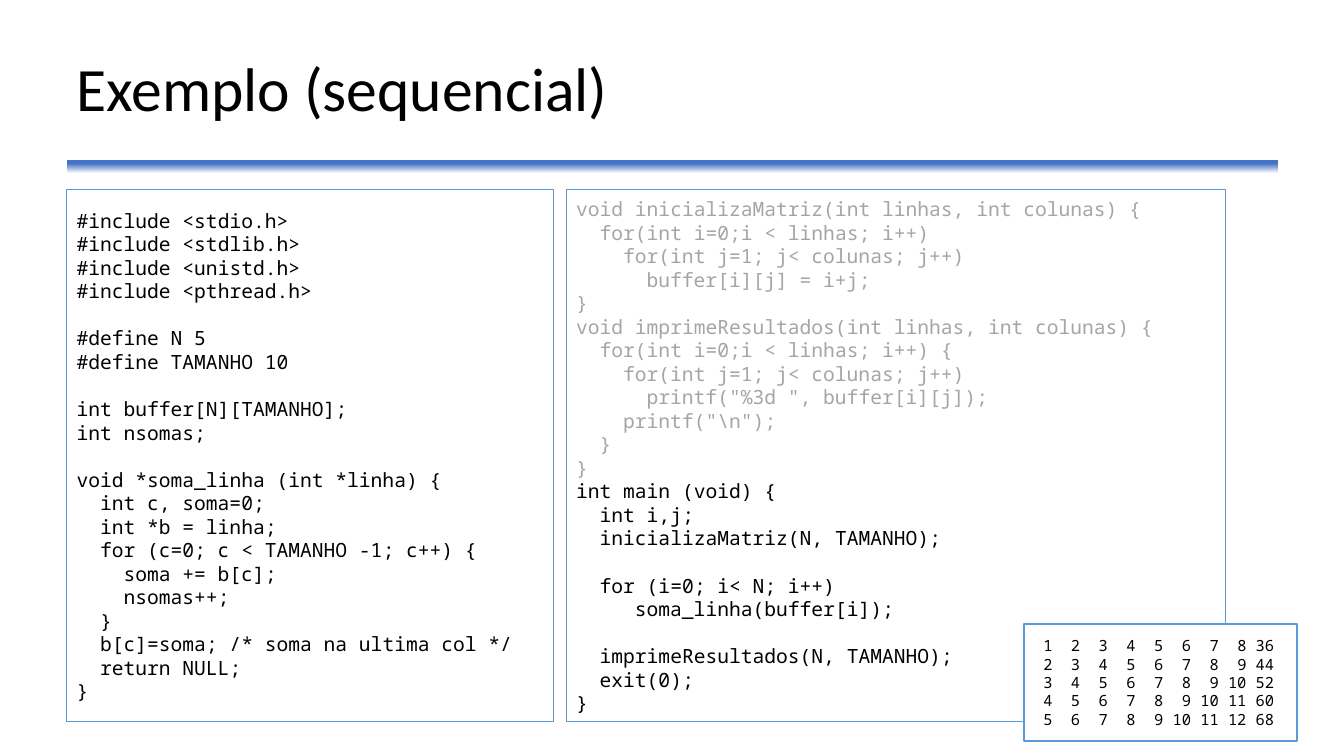
from lxml.etree import SubElement
from pptx import Presentation
from pptx.dml.color import RGBColor
from pptx.enum.shapes import MSO_SHAPE
from pptx.enum.text import MSO_ANCHOR, PP_ALIGN
from pptx.oxml.ns import qn
from pptx.util import Cm, Pt

MONO = "Noto Sans Mono"
BLACK, GREY, BLUE, WHITE = "000000", "A5A5A5", "5B9BD5", "FFFFFF"
CODE_SIZE, GRID_SIZE = 14, 11
ADVANCE = 0.6  # character width of the mono font, in ems
LEFT, WIDTH = Cm(1.68), Cm(30.53)

SUM_CODE = """\
#include <stdio.h>
#include <stdlib.h>
#include <unistd.h>
#include <pthread.h>

#define N 5
#define TAMANHO 10

int buffer[N][TAMANHO];
int nsomas;

void *soma_linha (int *linha) {
  int c, soma=0;
  int *b = linha;
  for (c=0; c < TAMANHO -1; c++) {
    soma += b[c];
    nsomas++;
  }
  b[c]=soma; /* soma na ultima col */
  return NULL;
}"""

HELPER_CODE = r"""void inicializaMatriz(int linhas, int colunas) {
  for(int i=0;i < linhas; i++)
    for(int j=1; j< colunas; j++)
      buffer[i][j] = i+j;
}
void imprimeResultados(int linhas, int colunas) {
  for(int i=0;i < linhas; i++) {
    for(int j=1; j< colunas; j++)
      printf("%3d ", buffer[i][j]);
    printf("\n");
  }
}"""

MAIN_CODE = """\
int main (void) {
  int i,j;
  inicializaMatriz(N, TAMANHO);

  for (i=0; i< N; i++)
     soma_linha(buffer[i]);

  imprimeResultados(N, TAMANHO);
  exit(0);
}"""


def color(code):
    return RGBColor.from_string(code)


def style(para, font, size, code):
    para.font.name = font
    para.font.size = Pt(size)
    para.font.color.rgb = color(code)


def add_para(frame):
    """Return the frame's first paragraph while it is empty, else a new one."""
    first = frame.paragraphs[0]
    para = frame.add_paragraph() if first.text else first
    para.alignment = PP_ALIGN.LEFT
    return para


def add_title(slide, text):
    frame = slide.shapes.add_textbox(LEFT, Cm(0.64), WIDTH, Cm(3.35)).text_frame
    frame.word_wrap = True
    frame.vertical_anchor = MSO_ANCHOR.MIDDLE
    para = frame.paragraphs[0]
    para.text = text
    para.line_spacing = 0.9
    style(para, "Calibri", 44, BLACK)


def add_rule(slide):
    """Draw the band under the title, fading downwards."""
    band = slide.shapes.add_shape(
        MSO_SHAPE.RECTANGLE, LEFT, Cm(4.04), WIDTH, Cm(0.33))
    band.shadow.inherit = False
    band.line.fill.background()
    band.fill.gradient()
    band.fill.gradient_angle = 270
    stops = band.fill.gradient_stops
    for stop, place, code in zip(stops, (0.25, 1), ("4472C4", WHITE)):
        stop.position = place
        stop.color.rgb = color(code)


def add_panel(slide, left, top, width, height):
    """Draw an outlined box and return its text frame."""
    box = slide.shapes.add_shape(
        MSO_SHAPE.RECTANGLE, left, top, width, height)
    box.shadow.inherit = False
    box.fill.solid()
    box.fill.fore_color.rgb = color(WHITE)
    box.line.color.rgb = color(BLUE)
    box.line.width = Pt(1)
    frame = box.text_frame
    frame.word_wrap = True
    frame.vertical_anchor = MSO_ANCHOR.MIDDLE
    return frame


def add_code(frame, code, tint):
    """Write code lines, with blanks as spacing and leading spaces as indents."""
    gap = 0
    for line in code.splitlines():
        if not line:
            gap = 16.8
            continue
        text = line.lstrip()
        depth = len(line) - len(text)
        para = add_para(frame)
        para.text = text
        para.space_before = Pt(gap)
        style(para, MONO, CODE_SIZE, tint)
        props = para._p.get_or_add_pPr()
        props.set("marL", str(Pt(depth * ADVANCE * CODE_SIZE)))
        props.set("indent", "0")
        gap = 0


def add_grid(frame, rows):
    """Write rows of numbers, right-aligned in columns three characters wide."""
    for row in rows:
        para = add_para(frame)
        para.text = "".join(f"\t{value}" for value in row)
        style(para, MONO, GRID_SIZE, BLACK)
        props = para._p.get_or_add_pPr()
        tabs = SubElement(props, qn("a:tabLst"))
        props.insert_element_before(tabs, "a:defRPr", "a:extLst")
        for col in range(len(row)):
            stop = Pt((2 + 3 * col) * ADVANCE * GRID_SIZE)
            SubElement(tabs, qn("a:tab"), pos=str(stop), algn="r")


def main():
    deck = Presentation()
    deck.slide_width, deck.slide_height = Cm(33.87), Cm(19.05)
    slide = deck.slides.add_slide(deck.slide_layouts[6])
    add_rule(slide)
    add_title(slide, "Exemplo (sequencial)")

    top, height = Cm(4.78), Cm(13.41)
    add_code(add_panel(slide, LEFT, top, Cm(12.27), height), SUM_CODE, BLACK)
    right = add_panel(slide, Cm(14.27), top, Cm(16.61), height)
    add_code(right, HELPER_CODE, GREY)
    add_code(right, MAIN_CODE, BLACK)

    sums = [list(range(i, i + 8)) for i in range(1, 6)]
    result = add_panel(slide, Cm(25.81), Cm(15.72), Cm(6.88), Cm(2.95))
    add_grid(result, [row + [sum(row)] for row in sums])
    deck.save("out.pptx")


if __name__ == "__main__":
    main()
